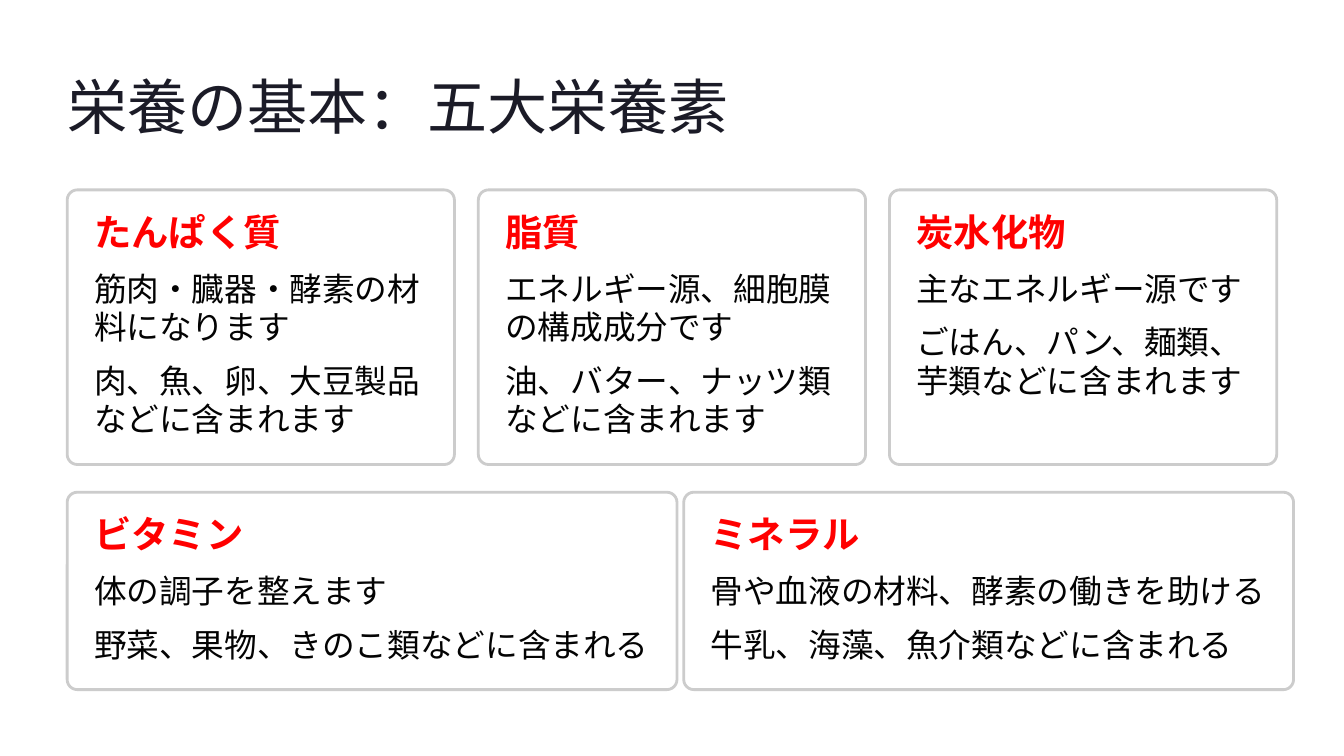
from dataclasses import dataclass

from lxml import etree
from pptx import Presentation
from pptx.dml.color import RGBColor
from pptx.enum import shapes, text
from pptx.oxml import ns
from pptx.util import Pt

INK = RGBColor(0x1B, 0x1B, 0x27)
RED = RGBColor(0xFF, 0x00, 0x00)
BODY = RGBColor(0x03, 0x03, 0x03)
WHITE = RGBColor(0xFF, 0xFF, 0xFF)
BORDER = RGBColor(0xCC, 0xCC, 0xCC)

LEFT = 57.6
CORNER = 8.7
INSET = 20.5
RIGHT_INSET = 15
PARAGRAPH_GAP = 13


@dataclass(frozen=True)
class Style:
    font: str
    size: float
    line: float
    color: RGBColor
    bold: bool = False


@dataclass(frozen=True)
class Nutrient:
    name: str
    role: str
    sources: str


@dataclass(frozen=True)
class Row:
    top: float
    width: float
    height: float
    gap: float
    nutrients: tuple[Nutrient, ...]


TITLE = Style("Inter", 51.5, 64.5, INK)
HEADING = Style("Inter", 32, 32, RED, True)
DETAIL = Style("Roboto", 28, 33, BODY)

ROWS = (
    Row(162.8, 331.9, 235.4, 20.5, (
        Nutrient("たんぱく質", "筋肉・臓器・酵素の材料になります",
                 "肉、魚、卵、大豆製品などに含まれます"),
        Nutrient("脂質", "エネルギー源、細胞膜の構成成分です",
                 "油、バター、ナッツ類などに含まれます"),
        Nutrient("炭水化物", "主なエネルギー源です",
                 "ごはん、パン、麺類、芋類などに含まれます"),
    )),
    Row(421.9, 522.7, 169.2, 5.8, (
        Nutrient("ビタミン", "体の調子を整えます",
                 "野菜、果物、きのこ類などに含まれる"),
        Nutrient("ミネラル", "骨や血液の材料、酵素の働きを助ける",
                 "牛乳、海藻、魚介類などに含まれる"),
    )),
)


def prepare_frame(tf, inset: float, right: float) -> None:
    tf.auto_size = text.MSO_AUTO_SIZE.NONE
    tf.word_wrap = True
    tf.vertical_anchor = text.MSO_ANCHOR.TOP
    tf.margin_left = tf.margin_top = Pt(inset)
    tf.margin_right = Pt(right)
    tf.margin_bottom = Pt(0)


def write(p, content: str, style: Style, before: float = 0) -> None:
    p.alignment = text.PP_ALIGN.LEFT
    p.line_spacing = Pt(style.line)
    p.space_before = Pt(before)
    r = p.add_run()
    r.text = content
    r.font.size = Pt(style.size)
    r.font.bold = style.bold
    r.font.color.rgb = style.color
    r.font.name = style.font
    # East Asian characters take the same font
    etree.SubElement(r.font._element, ns.qn("a:ea"), typeface=style.font)


def add_card(s, left: float, row: Row, nutrient: Nutrient) -> None:
    sp = s.shapes.add_shape(shapes.MSO_SHAPE.ROUNDED_RECTANGLE, Pt(left),
                            Pt(row.top), Pt(row.width), Pt(row.height))
    sp.adjustments[0] = CORNER / min(row.width, row.height)
    sp.shadow.inherit = False
    sp.fill.solid()
    sp.fill.fore_color.rgb = WHITE
    color = sp.fill._xPr.find(".//" + ns.qn("a:srgbClr"))
    etree.SubElement(color, ns.qn("a:alpha"), val="95000")
    sp.line.color.rgb = BORDER
    sp.line.width = Pt(2.4)

    tf = sp.text_frame
    prepare_frame(tf, INSET, RIGHT_INSET)
    write(tf.paragraphs[0], nutrient.name, HEADING)
    for detail in (nutrient.role, nutrient.sources):
        write(tf.add_paragraph(), detail, DETAIL, PARAGRAPH_GAP)


def main() -> None:
    prs = Presentation()
    prs.slide_width, prs.slide_height = Pt(1152), Pt(648)
    s = prs.slides.add_slide(prs.slide_layouts.get_by_name("Title Only"))

    # Title
    title = s.shapes.title
    title.left, title.top = Pt(LEFT), Pt(56.9)
    title.width, title.height = Pt(1036.8), Pt(64.8)
    prepare_frame(title.text_frame, 0, 0)
    write(title.text_frame.paragraphs[0], "栄養の基本：五大栄養素", TITLE)

    # Nutrient cards
    for row in ROWS:
        for i, nutrient in enumerate(row.nutrients):
            add_card(s, LEFT + i * (row.width + row.gap), row, nutrient)

    prs.save("out.pptx")


if __name__ == "__main__":
    main()
